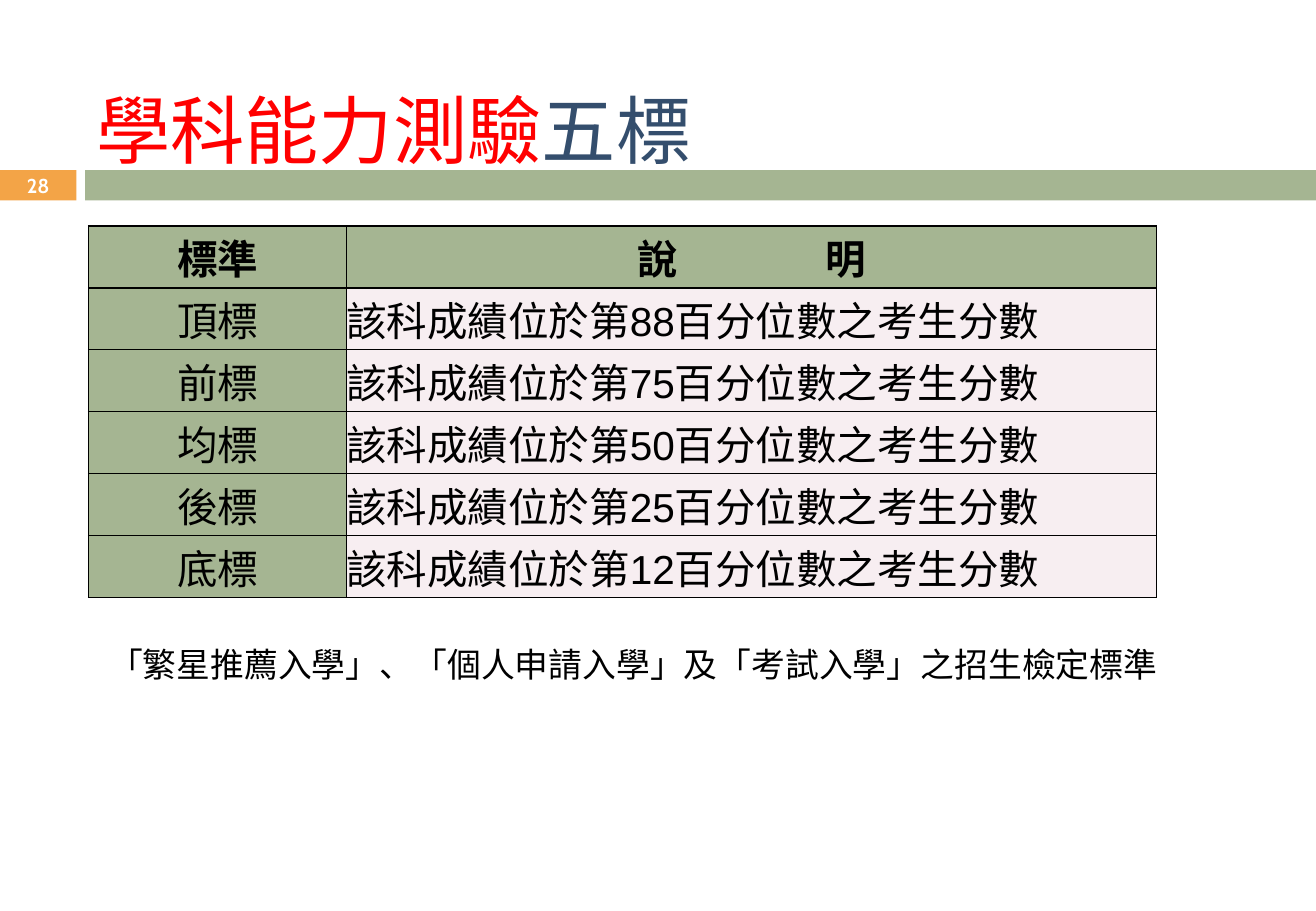
import pptx
import pptx.util
from pptx.dml.color import RGBColor
from pptx.enum.shapes import MSO_SHAPE
from pptx.enum.text import MSO_ANCHOR, MSO_AUTO_SIZE, PP_ALIGN
from pptx.oxml import parse_xml
from pptx.oxml.ns import nsdecls
from pptx.util import Inches

BLACK = RGBColor(0x00, 0x00, 0x00)
WHITE = RGBColor(0xFF, 0xFF, 0xFF)
RED = RGBColor(0xFF, 0x00, 0x00)
NAVY = RGBColor(0x34, 0x4E, 0x6D)
ORANGE = RGBColor(0xF3, 0xA4, 0x47)
GREEN = RGBColor(0xA5, 0xB5, 0x92)
PINK = RGBColor(0xF7, 0xEE, 0xF1)

STANDARDS = [("頂標", 88), ("前標", 75), ("均標", 50), ("後標", 25), ("底標", 12)]
COLUMN_WIDTHS = (2.12, 6.67)
ROW_HEIGHT = 0.51
HEADING_GAP = 82  # points between the two characters of the second heading


def add_span(para, text, size, color=BLACK, bold=False, font="Arial"):
    span = para.add_run()
    span.text = text
    span.font.name = font
    span.font.size = pptx.util.Pt(size)
    span.font.bold = bold
    span.font.color.rgb = color
    return span


def add_bar(page, left, width, color):
    bar = page.shapes.add_shape(MSO_SHAPE.RECTANGLE, Inches(left), Inches(1.4),
                                Inches(width), Inches(0.25))
    bar.shadow.inherit = False
    bar.fill.solid()
    bar.fill.fore_color.rgb = color
    bar.line.fill.background()


def add_title(page):
    title = page.shapes.title
    title.left, title.top = Inches(0.69), Inches(0.52)
    title.width, title.height = Inches(5.51), Inches(1.08)
    frame = title.text_frame
    frame.auto_size = MSO_AUTO_SIZE.NONE
    frame.vertical_anchor = MSO_ANCHOR.MIDDLE
    para = frame.paragraphs[0]
    para.alignment = PP_ALIGN.LEFT
    add_span(para, "學科能力測驗", 44, RED)
    add_span(para, "五標", 44, NAVY)


def add_text_box(page, left, top, width, height):
    box = page.shapes.add_textbox(Inches(left), Inches(top), Inches(width), Inches(height))
    box.text_frame.word_wrap = True
    return box.text_frame


def border_cell(cell):
    properties = cell._tc.get_or_add_tcPr()
    for position, side in enumerate(("lnL", "lnR", "lnT", "lnB")):
        properties.insert(position, parse_xml(
            f'<a:{side} {nsdecls("a")} w="12700"><a:solidFill>'
            f'<a:srgbClr val="{BLACK}"/></a:solidFill></a:{side}>'))


def format_cell(cell, fill, alignment):
    cell.margin_left = cell.margin_right = cell.margin_top = cell.margin_bottom = 0
    cell.vertical_anchor = MSO_ANCHOR.MIDDLE
    cell.fill.solid()
    cell.fill.fore_color.rgb = fill
    border_cell(cell)
    para = cell.text_frame.paragraphs[0]
    para.alignment = alignment
    return para


def add_standards_table(page):
    row_count = len(STANDARDS) + 1
    table = page.shapes.add_table(
        row_count, len(COLUMN_WIDTHS), Inches(0.73), Inches(1.86),
        Inches(sum(COLUMN_WIDTHS)), Inches(ROW_HEIGHT * row_count)).table
    for column, width in zip(table.columns, COLUMN_WIDTHS):
        column.width = Inches(width)
    for row in table.rows:
        row.height = Inches(ROW_HEIGHT)

    # Heading row, with the second heading spread by character spacing
    para = format_cell(table.cell(0, 0), GREEN, PP_ALIGN.CENTER)
    add_span(para, "標準", 24, bold=True)
    para = format_cell(table.cell(0, 1), GREEN, PP_ALIGN.CENTER)
    add_span(para, "說", 24, bold=True)
    gap = add_span(para, " ", 24, bold=True)
    gap.font._element.set("spc", str(HEADING_GAP * 100))
    add_span(para, "明", 24, bold=True)

    # One row for each standard
    for row, (name, percentile) in enumerate(STANDARDS, start=1):
        para = format_cell(table.cell(row, 0), GREEN, PP_ALIGN.CENTER)
        add_span(para, name, 24)
        para = format_cell(table.cell(row, 1), PINK, PP_ALIGN.LEFT)
        add_span(para, f"該科成績位於第{percentile}百分位數之考生分數", 24)


def main():
    deck = pptx.Presentation()
    deck.slide_width, deck.slide_height = Inches(10.83), Inches(7.5)
    page = deck.slides.add_slide(deck.slide_layouts[5])

    # Band under the title
    add_bar(page, 0, 0.63, ORANGE)
    add_bar(page, 0.7, 10.13, GREEN)
    add_title(page)
    add_standards_table(page)

    # Page number
    frame = add_text_box(page, 0, 1.39, 0.63, 0.27)
    frame.margin_top = frame.margin_bottom = 0
    frame.vertical_anchor = MSO_ANCHOR.MIDDLE
    frame.paragraphs[0].alignment = PP_ALIGN.CENTER
    add_span(frame.paragraphs[0], "28", 11.9, WHITE, bold=True, font="Cabin")

    # Note below the table
    frame = add_text_box(page, 0.8, 5.25, 8.95, 0.44)
    frame.auto_size = MSO_AUTO_SIZE.SHAPE_TO_FIT_TEXT
    add_span(frame.paragraphs[0],
             "「繁星推薦入學」、「個人申請入學」及「考試入學」之招生檢定標準", 20)

    deck.save("out.pptx")


if __name__ == "__main__":
    main()
